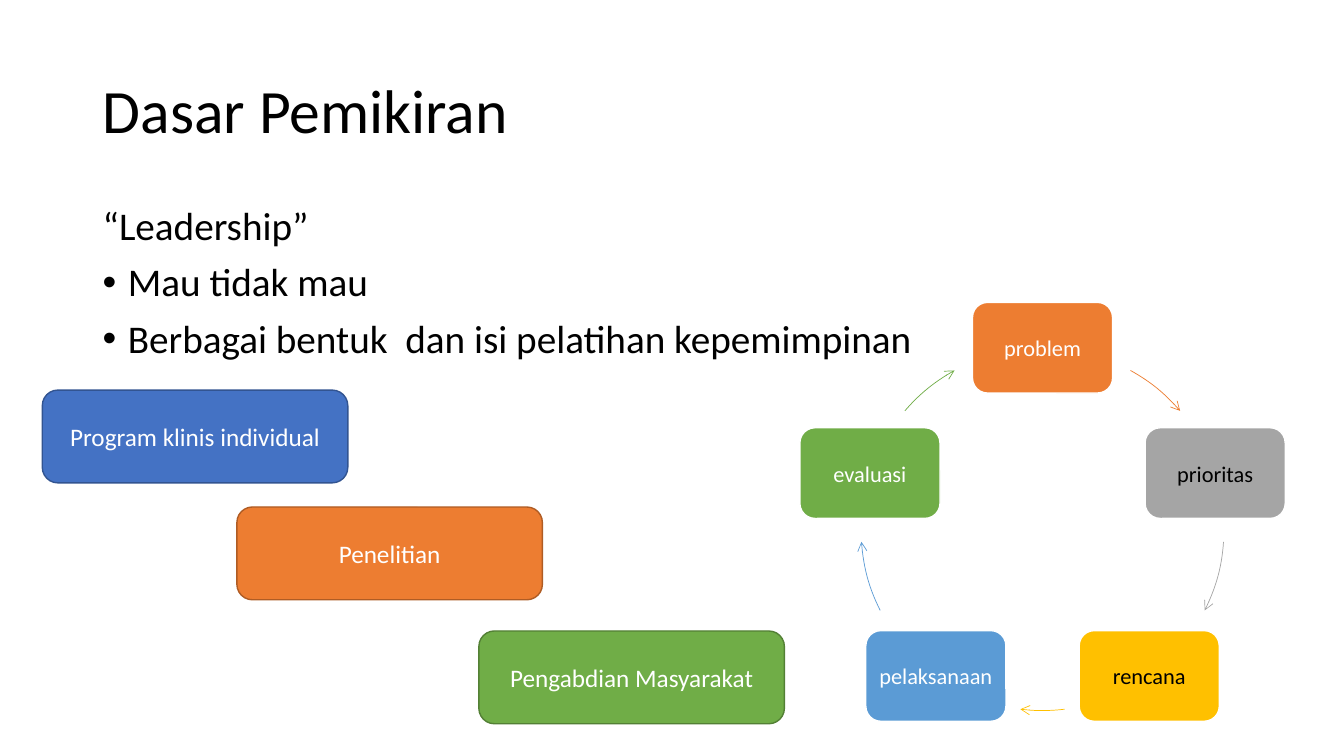
from dataclasses import dataclass
from math import cos, radians, sin

from lxml.etree import SubElement
from pptx import Presentation
from pptx.dml.color import RGBColor
from pptx.enum.shapes import MSO_SHAPE as Shape
from pptx.enum.text import MSO_ANCHOR as Anchor, PP_ALIGN as Align
from pptx.oxml.ns import qn
from pptx.util import Pt

EMU_PER_PX = 9144  # 100 px to the inch


def px(length):
    return round(length * EMU_PER_PX)


@dataclass(frozen=True)
class Theme:
    font: str = "Calibri"
    black: str = "000000"
    white: str = "FFFFFF"
    blue: str = "4472C4"
    dark_blue: str = "325491"
    orange: str = "ED7D31"
    dark_orange: str = "AF5C24"
    green: str = "70AD47"
    dark_green: str = "538035"
    gray: str = "A5A5A5"
    gold: str = "FFC000"
    sky: str = "5B9BD5"
    title_size: int = 44
    body_size: int = 28
    program_size: int = 18
    step_size: int = 16


class SlideBuilder:
    def __init__(self, slide, theme):
        self.shapes = slide.shapes
        self.theme = theme

    def style_text(self, para, size, color):
        for span in para.runs:
            span.font.name = self.theme.font
            span.font.size = Pt(size)
            span.font.color.rgb = RGBColor.from_string(color)

    def text_box(self, left, top, width, height, lines, size, anchor, before=0):
        """Add lines of text; each line is (text, bulleted)."""
        box = self.shapes.add_textbox(px(left), px(top), px(width), px(height))
        frame = box.text_frame
        frame.word_wrap = True
        frame.vertical_anchor = anchor
        frame.text = "\n".join(text for text, bulleted in lines)
        for para, (text, bulleted) in zip(frame.paragraphs, lines):
            para.line_spacing = 0.9
            para.space_before = Pt(before)
            self.style_text(para, size, self.theme.black)
            if bulleted:
                self.bullet(para)

    def bullet(self, para):
        props = para._p.get_or_add_pPr()
        props.set("marL", str(px(25)))
        props.set("indent", str(px(-25)))
        SubElement(props, qn("a:buFont"), typeface="Arial")
        SubElement(props, qn("a:buChar"), char="•")

    def card(self, left, top, width, height, text, fill, line, size, color):
        box = self.shapes.add_shape(
            Shape.ROUNDED_RECTANGLE, px(left), px(top), px(width), px(height))
        box.shadow.inherit = False
        box.fill.solid()
        box.fill.fore_color.rgb = RGBColor.from_string(fill)
        box.line.color.rgb = RGBColor.from_string(line)
        box.line.width = Pt(1)
        frame = box.text_frame
        frame.margin_left = frame.margin_right = px(7)
        frame.vertical_anchor = Anchor.MIDDLE
        frame.word_wrap = True
        frame.text = text
        para = frame.paragraphs[0]
        para.alignment = Align.CENTER
        self.style_text(para, size, color)

    def arc_arrow(self, center_x, center_y, radius, start, end, color):
        """Add an arc arrow; angles run clockwise from the top."""
        arc = self.shapes.add_shape(
            Shape.ARC, px(center_x - radius), px(center_y - radius),
            px(2 * radius), px(2 * radius))
        for index, angle in enumerate((start, end)):
            arc.adjustments[index] = (angle - 90) % 360 * 0.6
        arc.shadow.inherit = False
        arc.fill.background()
        arc.line.color.rgb = RGBColor.from_string(color)
        arc.line.width = Pt(0.5)
        SubElement(arc.line._get_or_add_ln(), qn("a:tailEnd"), type="arrow")


def main():
    deck = Presentation()
    deck.slide_width, deck.slide_height = px(1333), px(750)
    page = deck.slides.add_slide(deck.slide_layouts[6])
    theme = Theme()
    builder = SlideBuilder(page, theme)

    # Title and body
    builder.text_box(92, 40, 1150, 145, [("Dasar Pemikiran", False)],
                     theme.title_size, Anchor.MIDDLE)
    builder.text_box(92, 200, 1150, 476, [
        ("“Leadership”", False),
        ("Mau tidak mau", True),
        ("Berbagai bentuk  dan isi pelatihan kepemimpinan", True),
    ], theme.body_size, Anchor.TOP, before=10)

    # Cycle of steps, each followed by its arrow
    center_x, center_y, radius = 1034, 525, 180
    step_width, step_height = 139, 90
    steps = [
        ("problem", theme.orange, theme.white, 29, 49.3),
        ("prioritas", theme.gray, theme.black, 94, 116.6),
        ("rencana", theme.gold, theme.black, 173, 187),
        ("pelaksanaan", theme.sky, theme.white, 243.4, 266),
        ("evaluasi", theme.green, theme.white, 310.7, 331),
    ]
    for index, (text, fill, color, start, end) in enumerate(steps):
        angle = radians(360 / len(steps) * index)
        left = center_x + radius * sin(angle) - step_width / 2
        top = center_y - radius * cos(angle) - step_height / 2
        builder.card(left, top, step_width, step_height, text, fill,
                     theme.white, theme.step_size, color)
        builder.arc_arrow(center_x, center_y, radius, start, end, fill)

    # Staircase of programs
    programs = [
        (42, 387, "Program klinis individual", theme.blue, theme.dark_blue),
        (235, 503, "Penelitian", theme.orange, theme.dark_orange),
        (475, 626, "Pengabdian Masyarakat", theme.green, theme.dark_green),
    ]
    for left, top, text, fill, line in programs:
        builder.card(left, top, 303, 92, text, fill, line,
                     theme.program_size, theme.white)

    deck.save("out.pptx")


if __name__ == "__main__":
    main()
